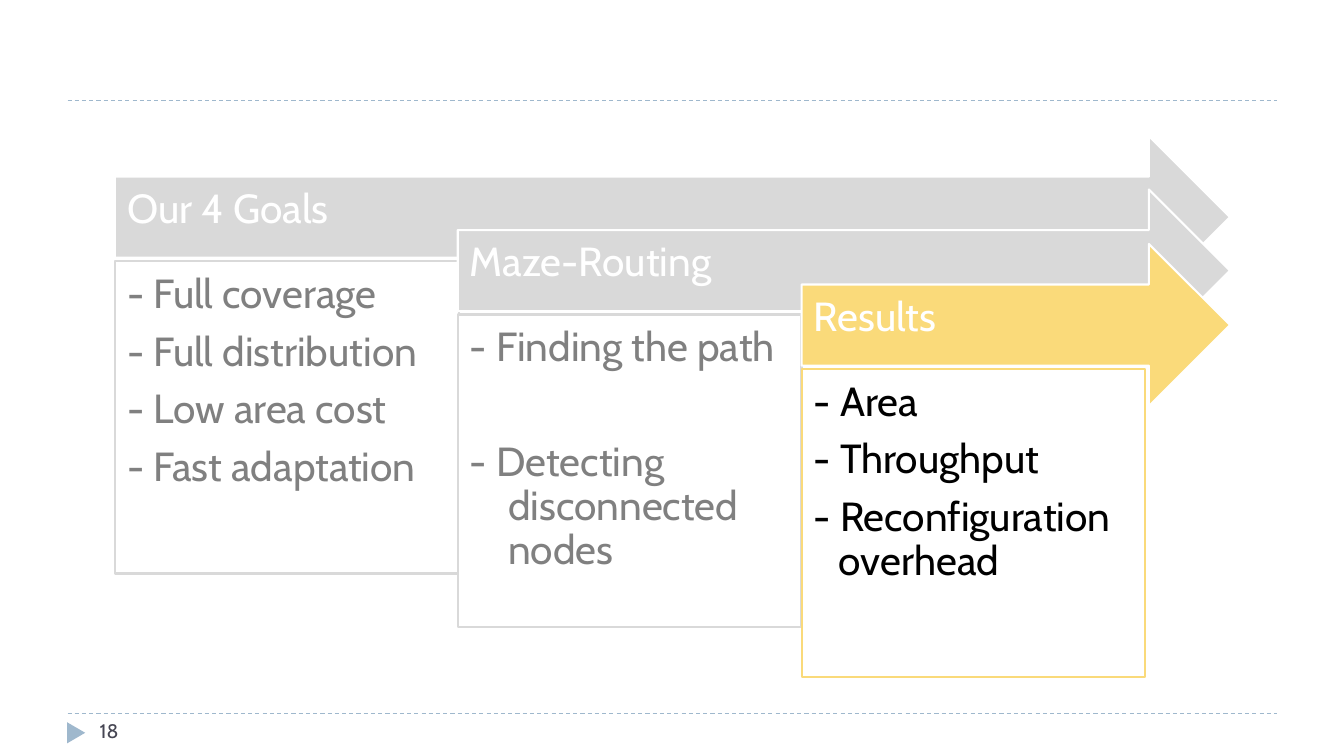
from pptx import Presentation
from pptx import util as u
from pptx.dml.color import RGBColor
from pptx.enum import dml, shapes, text
from pptx.oxml.ns import qn
from lxml import etree

PX = 9144  # 100 px to the inch
COLORS = {
    "rule": "9FB8CD", "faded": "D9D9D9", "active": "FADA7A", "white": "FFFFFF",
    "faded_text": "808080", "black": "000000", "number": "464653",
}
ARROW_RIGHT, ARROW_HEIGHT = 1220, 161
BOX_WIDTH, BOX_DROP = 341, 124

STAGES = [
    dict(title="Our 4 Goals", left=114, top=135, height=310, accent="faded", ink="faded_text",
         items=[("- Full coverage", {}), ("- Full distribution", {}),
                ("- Low area cost", {}), ("- Fast adaptation", {})]),
    dict(title="Maze-Routing", left=454, top=188, height=310, accent="faded", ink="faded_text",
         items=[("- Finding the path", {}),
                ("- Detecting disconnected nodes", dict(hang=38, before=41))]),
    dict(title="Results", left=795, top=242, height=306, accent="active", ink="black",
         items=[("- Area", {}), ("- Throughput", {}),
                ("- Reconfiguration overhead", dict(hang=25))]),
]

deck = Presentation()
deck.slide_width, deck.slide_height = 1333 * PX, 750 * PX
page = deck.slides.add_slide(deck.slide_layouts[6])


def add_panel(kind, left, top, width, height, fill, line=None):
    panel = page.shapes.add_shape(kind, left * PX, top * PX, width * PX, height * PX)
    panel.shadow.inherit = False
    panel.fill.solid()
    panel.fill.fore_color.rgb = RGBColor.from_string(COLORS[fill])
    if line:
        panel.line.color.rgb = RGBColor.from_string(COLORS[line])
        panel.line.width = u.Pt(1.5)
    else:
        panel.line.fill.background()
    return panel


def write(shape, items, color, size=29, insets=(12, 12, 12, 12), anchor="TOP",
          spacing=0.9, after=10):
    """Fill a shape with (words, format) items; insets run left, top, right, bottom."""
    frame = shape.text_frame
    frame.word_wrap = True
    frame.vertical_anchor = text.MSO_ANCHOR[anchor]
    frame.margin_left, frame.margin_top, frame.margin_right, frame.margin_bottom = (
        inset * PX for inset in insets)
    for index, (words, form) in enumerate(items):
        para = frame.add_paragraph() if index else frame.paragraphs[0]
        para.alignment = text.PP_ALIGN.LEFT
        para.line_spacing = spacing
        para.space_before = u.Pt(form.get("before", 0))
        para.space_after = u.Pt(after)
        if "hang" in form:
            properties = para._p.get_or_add_pPr()
            properties.set("marL", str(form["hang"] * PX))
            properties.set("indent", str(-form["hang"] * PX))
        span = para.add_run()
        span.text = words
        span.font.name = "Cabin"
        span.font.size = u.Pt(size)
        span.font.color.rgb = RGBColor.from_string(COLORS[color])


for height in (708, 100):
    rule = page.shapes.add_connector(
        shapes.MSO_CONNECTOR.STRAIGHT, 67 * PX, height * PX, 1267 * PX, height * PX)
    rule.line.color.rgb = RGBColor.from_string(COLORS["rule"])
    rule.line.width = u.Pt(0.75)
    rule.line.dash_style = dml.MSO_LINE.DASH
    etree.SubElement(rule._element.spPr, qn("a:effectLst"))

marker = add_panel(shapes.MSO_SHAPE.ISOSCELES_TRIANGLE, 65, 718, 21, 18, "rule")
marker.rotation = 90

for stage in STAGES:
    left, top = stage["left"], stage["top"]
    arrow = add_panel(shapes.MSO_SHAPE.RIGHT_ARROW, left, top, ARROW_RIGHT - left,
                      ARROW_HEIGHT, stage["accent"], "white")
    write(arrow, [(stage["title"], {})], "white", insets=(12, 12, 28, 26), anchor="MIDDLE")
    box = add_panel(shapes.MSO_SHAPE.RECTANGLE, left, top + BOX_DROP, BOX_WIDTH,
                    stage["height"], "white", stage["accent"])
    write(box, stage["items"], stage["ink"])

number = page.shapes.add_textbox(89 * PX, 708 * PX, 289 * PX, 40 * PX)
write(number, [("18", {})], "number", size=14, insets=(10, 5, 10, 5), spacing=1.0, after=0)

deck.save("out.pptx")
